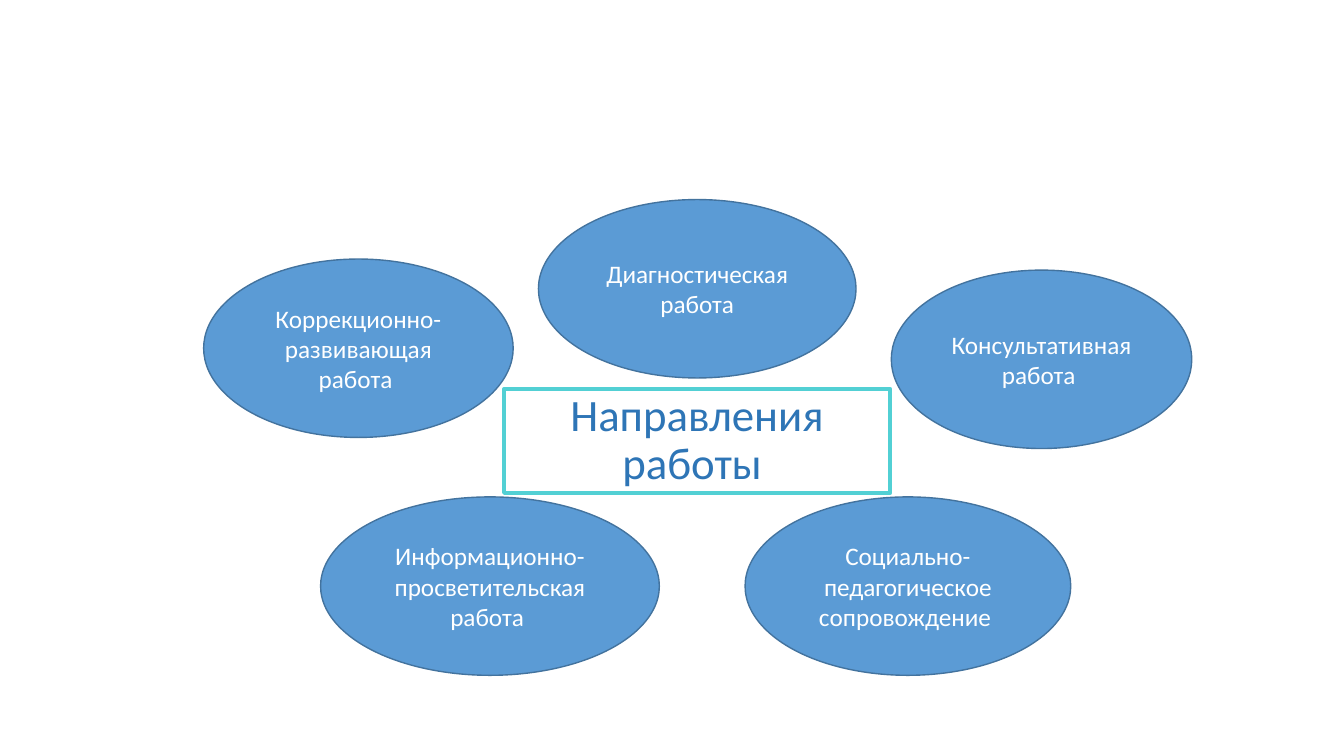
from lxml import etree
from pptx import Presentation
from pptx.dml.color import RGBColor
from pptx.enum.shapes import MSO_SHAPE
from pptx.enum.text import MSO_ANCHOR, MSO_AUTO_SIZE, PP_ALIGN
from pptx.oxml.ns import qn
from pptx.util import Inches, Pt

OVAL = MSO_SHAPE.OVAL
MIDDLE = MSO_ANCHOR.MIDDLE
CENTER = PP_ALIGN.CENTER
NO_AUTOFIT = MSO_AUTO_SIZE.NONE
TITLE_ONLY = 5

COLORS = {
    "white": "FFFFFF",
    "title": "2E75B6",
    "frame": "52D0D4",
    "oval": "5B9BD5",
    "outline": "43739E",
}
OVAL_HEIGHT = 1.77
DIRECTIONS = [
    ("Консультативная работа ", 8.84, 2.68, 2.98),
    ("Коррекционно-развивающая работа ", 2.02, 2.57, 3.07),
    ("Диагностическая работа", 5.34, 1.98, 3.15),
    ("Информационно-просветительская работа ", 3.18, 4.93, 3.36),
    ("Социально-педагогическое сопровождение ", 7.39, 4.93, 3.23),
]


class DirectionsSlide:
    """Holds the slide and the style of its title and ovals."""

    font = "Calibri"

    def __init__(self, slide):
        self.slide = slide

    def color(self, name):
        return RGBColor.from_string(COLORS[name])

    def paint(self, shape, fill, line, width):
        shape.fill.solid()
        shape.fill.fore_color.rgb = self.color(fill)
        shape.line.color.rgb = self.color(line)
        shape.line.width = Pt(width)

    def label(self, shape, text, size, color):
        frame = shape.text_frame
        frame.text = text
        frame.word_wrap = True
        frame.auto_size = NO_AUTOFIT
        frame.vertical_anchor = MIDDLE
        paragraph = frame.paragraphs[0]
        paragraph.alignment = CENTER
        paragraph.font.name = self.font
        paragraph.font.size = Pt(size)
        paragraph.font.color.rgb = self.color(color)
        return paragraph

    def title(self, text, left, top, width, height):
        heading = self.slide.shapes.title
        heading.left, heading.top = Inches(left), Inches(top)
        heading.width, heading.height = Inches(width), Inches(height)
        self.paint(heading, "white", "frame", 3)
        properties = heading.element.spPr
        fill_color = properties.find(qn("a:solidFill")).find(qn("a:srgbClr"))
        etree.SubElement(fill_color, qn("a:alpha"), val="57000")
        etree.SubElement(properties.find(qn("a:ln")), qn("a:round"))
        self.label(heading, text, 32, "title").line_spacing = 0.9

    def oval(self, text, left, top, width):
        direction = self.slide.shapes.add_shape(
            OVAL, Inches(left), Inches(top), Inches(width), Inches(OVAL_HEIGHT))
        direction.shadow.inherit = False
        self.paint(direction, "oval", "outline", 1)
        self.label(direction, text, 18, "white")


def main():
    deck = Presentation()
    deck.slide_width, deck.slide_height = Inches(13.33), Inches(7.5)
    page = DirectionsSlide(deck.slides.add_slide(deck.slide_layouts[TITLE_ONLY]))
    page.title("Направления работы ", 5, 3.86, 3.83, 1.03)
    for text, left, top, width in DIRECTIONS:
        page.oval(text, left, top, width)
    deck.save("out.pptx")


if __name__ == "__main__":
    main()
